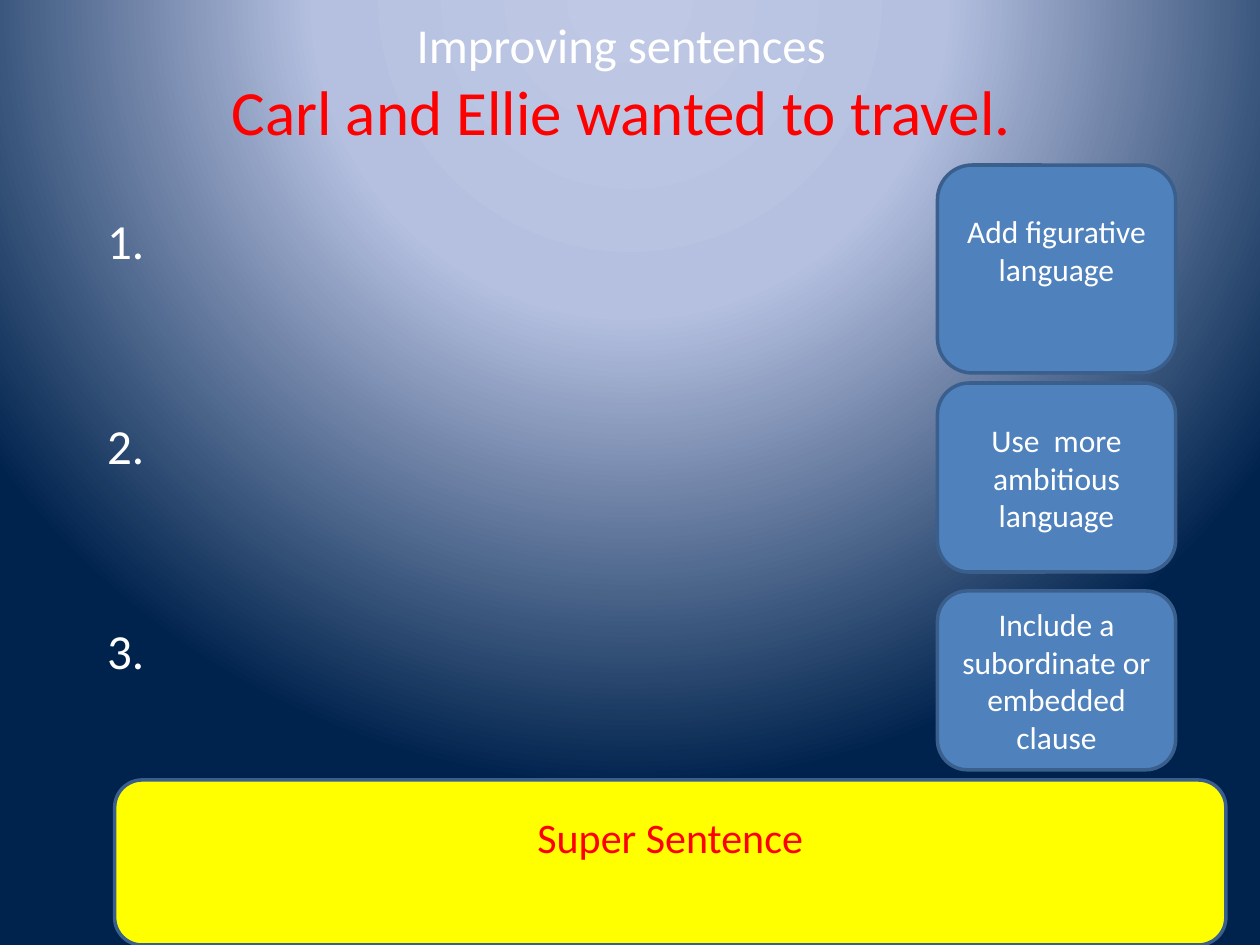
"""Build the sentence-improving worksheet slide."""
from dataclasses import dataclass

from lxml import etree
from pptx import Presentation
from pptx import util as u
from pptx.dml.color import RGBColor
from pptx.enum import shapes, text
from pptx.oxml import parse_xml
from pptx.oxml.ns import nsdecls, qn


@dataclass(frozen=True)
class Theme:
    font: str = "Calibri"
    white: str = "FFFFFF"
    red: str = "FF0000"
    blue: str = "4F81BD"
    edge: str = "3A5F8C"
    yellow: str = "FFFF00"
    glow: tuple = ((0, "BFC9E5"), (40, "B5C0E0"), (100, "00234D"))
    heading: float = 27.9
    sentence: float = 36
    number: float = 28
    hint: float = 18
    banner: float = 24
    line_height: float = 1.22


class Worksheet:
    def __init__(self, page, theme):
        self.page = page
        self.theme = theme

    def place(self, shape, left, top, width, height):
        shape.left, shape.top = u.Pt(left), u.Pt(top)
        shape.width, shape.height = u.Pt(width), u.Pt(height)

    def style(self, para, size, color, align):
        para.alignment = align
        para.space_before = u.Pt(0)
        para.font.name = self.theme.font
        para.font.size = u.Pt(size)
        para.font.color.rgb = RGBColor.from_string(color)

    def background(self):
        stops = "".join(
            f'<a:gs pos="{position * 1000}"><a:srgbClr val="{color}"/></a:gs>'
            for position, color in self.theme.glow)
        self.page._element.cSld.insert(0, parse_xml(
            f'<p:bg {nsdecls("p", "a")}><p:bgPr><a:gradFill rotWithShape="1">'
            f'<a:gsLst>{stops}</a:gsLst><a:path path="circle">'
            '<a:fillToRect l="50000" t="-80000" r="50000" b="180000"/></a:path>'
            '</a:gradFill><a:effectLst/></p:bgPr></p:bg>'))

    def title(self, lines, area, bottom):
        box = self.page.shapes.title
        self.place(box, *area)
        frame = box.text_frame
        frame.auto_size = text.MSO_AUTO_SIZE.NONE
        frame.vertical_anchor = text.MSO_ANCHOR.BOTTOM
        frame.margin_bottom = u.Pt(bottom)
        frame.text = "\n".join(words for words, _, _ in lines)
        for para, (_, size, color) in zip(frame.paragraphs, lines):
            self.style(para, size, color, text.PP_ALIGN.CENTER)

    def numbers(self, labels, area, indent, gap):
        box = self.page.placeholders[1]
        self.place(box, *area)
        frame = box.text_frame
        frame.auto_size = text.MSO_AUTO_SIZE.NONE
        frame.text = "\n".join(labels)
        for index, para in enumerate(frame.paragraphs):
            layout = para._p.get_or_add_pPr()
            layout.set("marL", str(u.Pt(indent)))
            layout.set("indent", str(-u.Pt(indent)))
            etree.SubElement(layout, qn("a:buNone"))
            self.style(para, self.theme.number, self.theme.white, text.PP_ALIGN.LEFT)
            if index:
                para.space_before = u.Pt(gap)

    def card(self, words, area, fill, size, color, raised=False):
        box = self.page.shapes.add_shape(
            shapes.MSO_SHAPE.ROUNDED_RECTANGLE, *map(u.Pt, area))
        box.shadow.inherit = False
        box.fill.solid()
        box.fill.fore_color.rgb = RGBColor.from_string(fill)
        box.line.color.rgb = RGBColor.from_string(self.theme.edge)
        box.line.width = u.Pt(2)
        frame = box.text_frame
        frame.word_wrap = True
        frame.vertical_anchor = text.MSO_ANCHOR.MIDDLE
        if raised:
            frame.margin_bottom = u.Pt(3.6 + size * self.theme.line_height)
        frame.text = words
        self.style(frame.paragraphs[0], size, color, text.PP_ALIGN.CENTER)


def main():
    deck = Presentation()
    deck.slide_width, deck.slide_height = u.Pt(720), u.Pt(540)
    theme = Theme()
    sheet = Worksheet(deck.slides.add_slide(deck.slide_layouts[1]), theme)
    sheet.background()
    sheet.title(
        [("Improving sentences", theme.heading, theme.white),
         ("Carl and Ellie wanted to travel.", theme.sentence, theme.red)],
        (31, 43.2, 648, 67.7), bottom=26)
    sheet.numbers(["1.", "2.", "3."], (54, 116.6, 453.6, 328.3), indent=40.5, gap=83.5)
    hints = [
        ("Add figurative language", 94.3, 118.8, True),
        ("Use  more ambitious language", 218.9, 108, False),
        ("Include a subordinate or embedded clause", 337.7, 102.2, False),
    ]
    for words, top, height, raised in hints:
        sheet.card(words, (535.7, top, 136.1, height),
                   theme.blue, theme.hint, theme.white, raised)
    sheet.card("Super Sentence", (65.5, 445.7, 635, 94.3),
               theme.yellow, theme.banner, theme.red, raised=True)
    deck.save("out.pptx")


if __name__ == "__main__":
    main()
